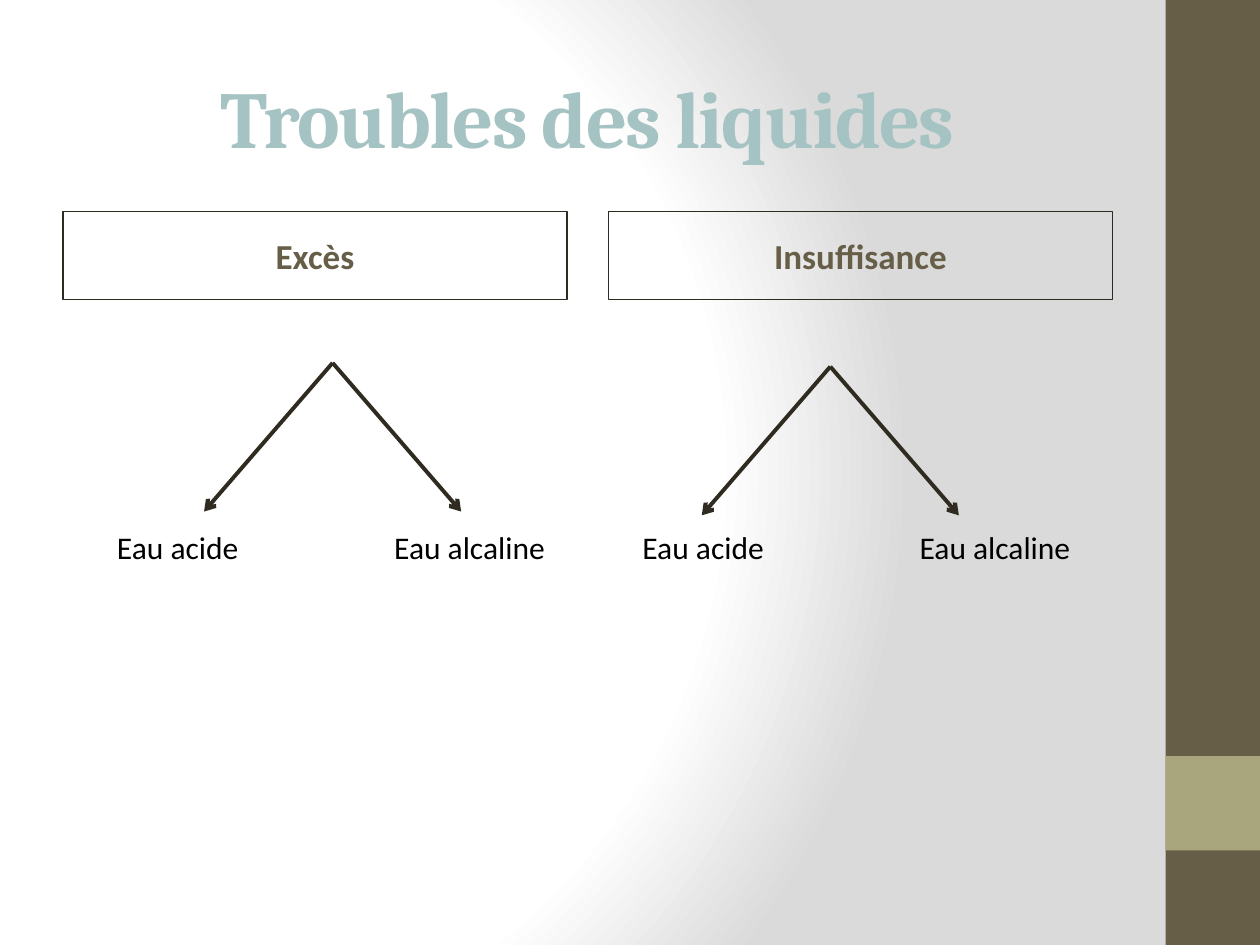
"""Build the slide on fluid disorders: excess and insufficiency, each split in two branches."""
import dataclasses

import pptx
import pptx.dml.color
import pptx.enum.shapes
import pptx.enum.text
import pptx.oxml
import pptx.oxml.ns
import pptx.util
from pptx.util import Inches


@dataclasses.dataclass(frozen=True)
class Theme:
    heading_font: str = "Cambria"
    body_font: str = "Calibri"
    title_size: int = 46
    header_size: int = 20
    label_size: int = 18
    title: str = "A4C3C2"
    brown: str = "675E47"
    olive: str = "A9A57C"
    dark: str = "2F2B20"
    text: str = "000000"
    light: str = "FFFFFF"
    shade: str = "DADADA"


def write_text(shape, text, *, size, color, font, bold=False, align="LEFT",
               anchor="TOP", wrap=True, before=0, spacing=0):
    frame = shape.text_frame
    frame.word_wrap = wrap
    frame.auto_size = getattr(pptx.enum.text.MSO_AUTO_SIZE, "NONE" if wrap else "SHAPE_TO_FIT_TEXT")
    frame.vertical_anchor = getattr(pptx.enum.text.MSO_ANCHOR, anchor)
    paragraph = frame.paragraphs[0]
    paragraph.alignment = getattr(pptx.enum.text.PP_ALIGN, align)
    paragraph.space_before = pptx.util.Pt(before)
    run = paragraph.add_run()
    run.text = text
    run.font.size = pptx.util.Pt(size)
    run.font.name = font
    run.font.bold = bold
    run.font.color.rgb = pptx.dml.color.RGBColor.from_string(color)
    if spacing:
        run.font._element.set("spc", str(spacing * 100))


def add_box(slide, left, top, width, height, fill=None, line=None):
    shape = slide.shapes.add_shape(
        pptx.enum.shapes.MSO_SHAPE.RECTANGLE,
        Inches(left), Inches(top), Inches(width), Inches(height))
    shape.shadow.inherit = False
    if fill:
        shape.fill.solid()
        shape.fill.fore_color.rgb = pptx.dml.color.RGBColor.from_string(fill)
    else:
        shape.fill.background()
    if line:
        shape.line.color.rgb = pptx.dml.color.RGBColor.from_string(line)
        shape.line.width = pptx.util.Pt(0.75)
    else:
        shape.line.fill.background()
    return shape


theme = Theme()
presentation = pptx.Presentation()
presentation.slide_width = Inches(10)
presentation.slide_height = Inches(7.5)
slide = presentation.slides.add_slide(presentation.slide_layouts.get_by_name("Title Only"))

slide.background.fill.solid()
background = slide.element.find(".//" + pptx.oxml.ns.qn("p:bgPr"))
stops = "".join(
    f'<a:gs pos="{position}"><a:srgbClr val="{color}"/></a:gs>'
    for position, color in ((0, theme.light), (75000, theme.light), (100000, theme.shade)))
background.replace(background[0], pptx.oxml.parse_xml(
    f'<a:gradFill {pptx.oxml.ns.nsdecls("a")} rotWithShape="1"><a:gsLst>{stops}</a:gsLst>'
    '<a:path path="circle"><a:fillToRect l="20000" t="50000" r="100000" b="50000"/></a:path>'
    '</a:gradFill>'))

add_box(slide, 9.25, 0, 0.75, 7.5, fill=theme.brown)
add_box(slide, 9.25, 6, 0.75, 0.75, fill=theme.olive)

title = slide.shapes.title
title.left, title.top, title.width, title.height = map(Inches, (0.5, 0.3, 8.33, 1.25))
write_text(title, "Troubles des liquides", size=theme.title_size, color=theme.title,
           font=theme.heading_font, bold=True, align="CENTER", anchor="MIDDLE", spacing=-1)

columns = (
    ("Excès", 0.5, 2.64, 2.88, (0.83, 3.03)),
    ("Insuffisance", 4.83, 6.59, 2.91, (5, 7.2)),
)
branches = (("Eau acide", -1.02, 1.18), ("Eau alcaline", 1.02, 1.41))

for header, left, apex, top, label_lefts in columns:
    box = add_box(slide, left, 1.68, 4, 0.7, line=theme.dark)
    write_text(box, header, size=theme.header_size, color=theme.brown, font=theme.body_font,
               bold=True, align="CENTER", anchor="MIDDLE", before=4)
    for (label, reach, width), label_left in zip(branches, label_lefts):
        arrow = slide.shapes.add_connector(
            pptx.enum.shapes.MSO_CONNECTOR.STRAIGHT,
            Inches(apex), Inches(top), Inches(apex + reach), Inches(top + 1.18))
        arrow.line.color.rgb = pptx.dml.color.RGBColor.from_string(theme.dark)
        arrow.line.width = pptx.util.Pt(2.25)
        properties = arrow.element.spPr
        outline = properties.find(pptx.oxml.ns.qn("a:ln"))
        outline.append(pptx.oxml.parse_xml(
            f'<a:tailEnd {pptx.oxml.ns.nsdecls("a")} type="arrow"/>'))
        properties.append(pptx.oxml.parse_xml(f'<a:effectLst {pptx.oxml.ns.nsdecls("a")}/>'))
        text_box = slide.shapes.add_textbox(
            Inches(label_left), Inches(4.14), Inches(width), Inches(0.4))
        write_text(text_box, label, size=theme.label_size, color=theme.text,
                   font=theme.body_font, wrap=False)

presentation.save("out.pptx")
